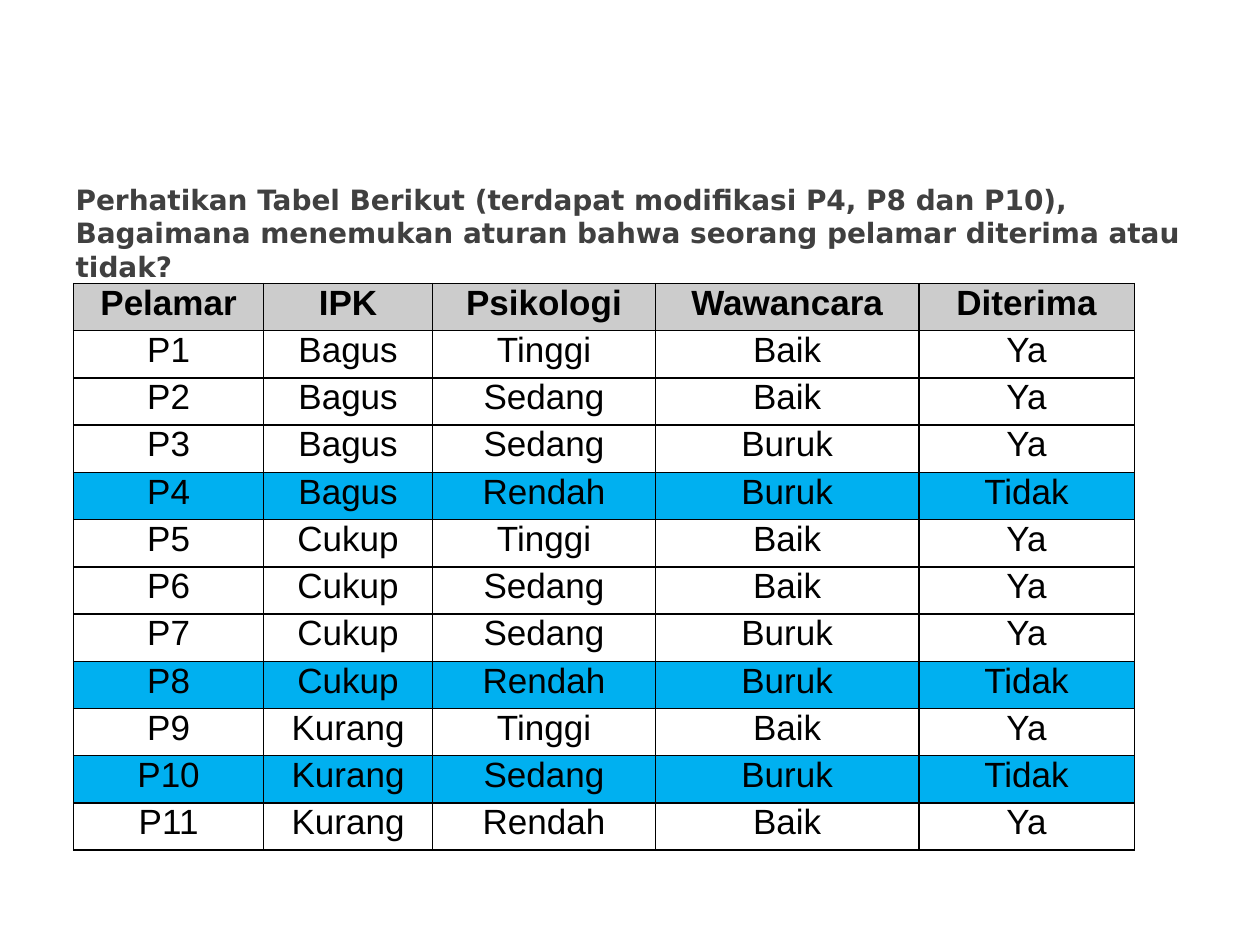
"""Build the applicant decision table slide."""
from dataclasses import dataclass
from typing import Optional

from lxml.etree import SubElement
from pptx import Presentation
from pptx.dml.color import RGBColor
from pptx.enum.text import MSO_ANCHOR, MSO_AUTO_SIZE, PP_ALIGN
from pptx.oxml.ns import qn
from pptx.slide import Slide
from pptx.table import Table, _Cell
from pptx.util import Pt

BLACK = RGBColor(0x00, 0x00, 0x00)
WHITE = RGBColor(0xFF, 0xFF, 0xFF)
DARK_GREY = RGBColor(0x40, 0x40, 0x40)
HEADER_GREY = RGBColor(0xCC, 0xCC, 0xCC)
HIGHLIGHT_BLUE = RGBColor(0x00, 0xB0, 0xF0)

QUESTION = (
    "Perhatikan Tabel Berikut (terdapat modifikasi P4, P8 dan P10), "
    "Bagaimana menemukan aturan bahwa seorang pelamar diterima atau tidak?"
)
COLUMN_WIDTHS = (108.7, 96.5, 127.4, 150.5, 123.1)
ROW_HEIGHT = 27
TABLE_LEFT = 42
TABLE_TOP = 162


@dataclass(frozen=True)
class Row:
    values: tuple[str, ...]
    fill: Optional[RGBColor] = None
    bold: bool = False


ROWS = (
    Row(("Pelamar", "IPK", "Psikologi", "Wawancara", "Diterima"), HEADER_GREY, True),
    Row(("P1", "Bagus", "Tinggi", "Baik", "Ya")),
    Row(("P2", "Bagus", "Sedang", "Baik", "Ya")),
    Row(("P3", "Bagus", "Sedang", "Buruk", "Ya")),
    Row(("P4", "Bagus", "Rendah", "Buruk", "Tidak"), HIGHLIGHT_BLUE),
    Row(("P5", "Cukup", "Tinggi", "Baik", "Ya")),
    Row(("P6", "Cukup", "Sedang", "Baik", "Ya")),
    Row(("P7", "Cukup", "Sedang", "Buruk", "Ya")),
    Row(("P8", "Cukup", "Rendah", "Buruk", "Tidak"), HIGHLIGHT_BLUE),
    Row(("P9", "Kurang", "Tinggi", "Baik", "Ya")),
    Row(("P10", "Kurang", "Sedang", "Buruk", "Tidak"), HIGHLIGHT_BLUE),
    Row(("P11", "Kurang", "Rendah", "Baik", "Ya")),
)


def add_title(slide: Slide) -> None:
    title = slide.shapes.title
    title.left, title.top, title.width, title.height = Pt(36), Pt(103.7), Pt(648), Pt(58.3)
    frame = title.text_frame
    frame.text = QUESTION
    frame.word_wrap = True
    frame.auto_size = MSO_AUTO_SIZE.NONE
    frame.vertical_anchor = MSO_ANCHOR.MIDDLE
    para = frame.paragraphs[0]
    para.alignment = PP_ALIGN.LEFT
    font = para.runs[0].font
    font.name = "DejaVu Sans"
    font.size = Pt(16)
    font.bold = True
    font.color.rgb = DARK_GREY


def draw_borders(cell: _Cell) -> None:
    properties = cell._tc.get_or_add_tcPr()
    for side in ("a:lnL", "a:lnR", "a:lnT", "a:lnB"):
        line = SubElement(properties, qn(side), w=str(Pt(1)))
        fill = SubElement(line, qn("a:solidFill"))
        SubElement(fill, qn("a:srgbClr"), val=str(BLACK))


def fill_cell(cell: _Cell, text: str, row: Row) -> None:
    draw_borders(cell)
    if row.fill is None:
        cell.fill.background()
    else:
        cell.fill.solid()
        cell.fill.fore_color.rgb = row.fill
    cell.margin_left = cell.margin_right = Pt(5)
    cell.margin_top = cell.margin_bottom = Pt(0)
    cell.vertical_anchor = MSO_ANCHOR.TOP
    cell.text_frame.text = text
    para = cell.text_frame.paragraphs[0]
    para.alignment = PP_ALIGN.CENTER
    font = para.runs[0].font
    font.name = "Arial"
    font.size = Pt(20)
    font.bold = row.bold
    font.color.rgb = BLACK


def add_applicant_table(slide: Slide) -> Table:
    frame = slide.shapes.add_table(
        len(ROWS), len(COLUMN_WIDTHS), Pt(TABLE_LEFT), Pt(TABLE_TOP),
        Pt(sum(COLUMN_WIDTHS)), Pt(ROW_HEIGHT * len(ROWS)),
    )
    table = frame.table
    table.horz_banding = False
    for column, width in zip(table.columns, COLUMN_WIDTHS):
        column.width = Pt(width)
    for table_row, row in zip(table.rows, ROWS):
        table_row.height = Pt(ROW_HEIGHT)
        for cell, text in zip(table_row.cells, row.values):
            fill_cell(cell, text, row)
    return table


def main() -> None:
    deck = Presentation()
    deck.slide_width, deck.slide_height = Pt(720), Pt(540)
    slide = deck.slides.add_slide(deck.slide_layouts[5])
    slide.background.fill.solid()
    slide.background.fill.fore_color.rgb = WHITE
    add_title(slide)
    add_applicant_table(slide)
    deck.save("out.pptx")


if __name__ == "__main__":
    main()
